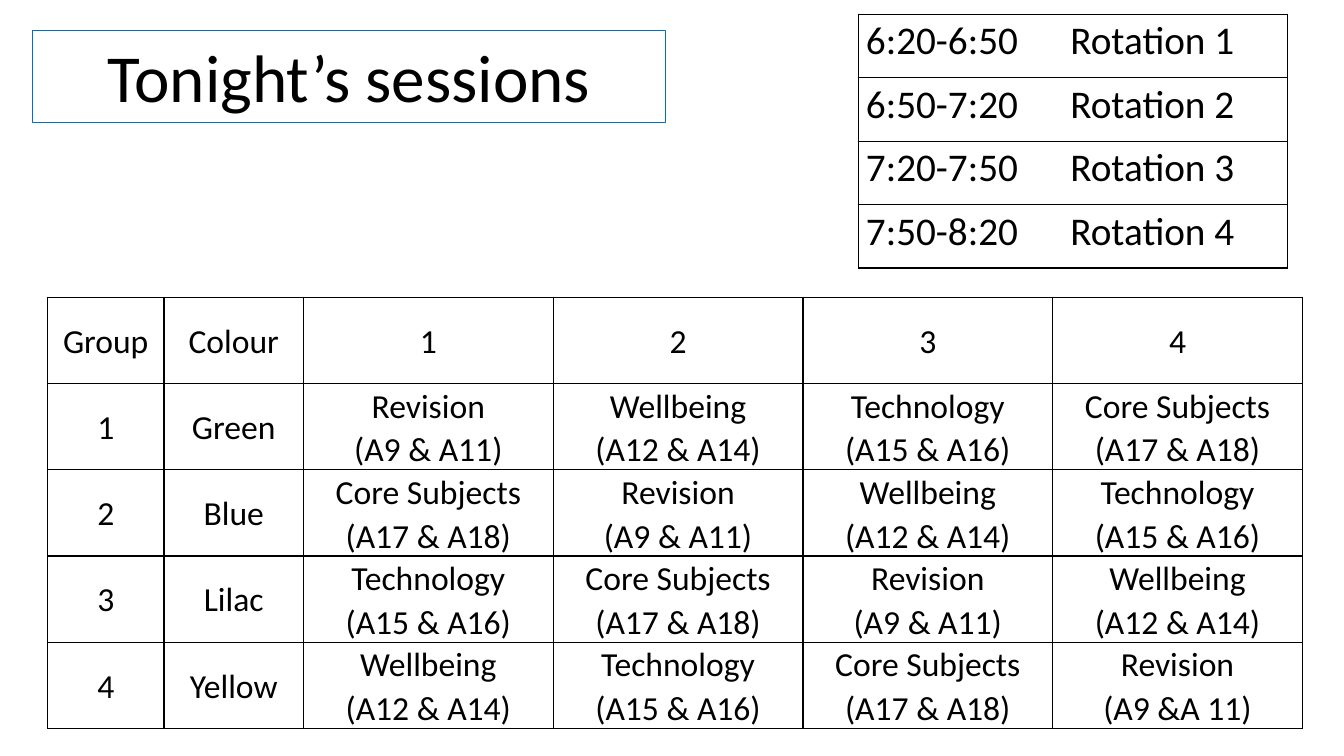
from dataclasses import dataclass

import lxml.etree
import pptx
import pptx.dml.color
import pptx.enum.text
import pptx.oxml.ns
import pptx.slide
import pptx.table
import pptx.util

Pt = pptx.util.Pt
Align = pptx.enum.text.PP_ALIGN
Anchor = pptx.enum.text.MSO_ANCHOR

COLOURS = {"text": "000000", "border": "000000", "cell": "FFFFFF", "title_line": "0070C0"}
FONT = "Calibri"
ROTATION_TAB = 146


@dataclass
class Grid:
    left: float
    top: float
    column_widths: list[float]
    row_height: float
    rows: list[list[str]]
    font_size: float
    align: Align
    anchor: Anchor


def rgb(name: str) -> pptx.dml.color.RGBColor:
    return pptx.dml.color.RGBColor.from_string(COLOURS[name])


def format_text(frame: pptx.text.text.TextFrame, size: float, align: Align) -> None:
    for paragraph in frame.paragraphs:
        paragraph.alignment = align
        for run in paragraph.runs:
            run.font.name = FONT
            run.font.size = Pt(size)
            run.font.color.rgb = rgb("text")


def add_element(parent, tag: str, **attributes: str):
    return lxml.etree.SubElement(parent, pptx.oxml.ns.qn(tag), attributes)


def add_borders(cell: pptx.table._Cell) -> None:
    """Draw all four sides; the schema wants them ahead of the fill."""
    properties = cell._tc.get_or_add_tcPr()
    for position, side in enumerate(("a:lnL", "a:lnR", "a:lnT", "a:lnB")):
        line = add_element(properties, side, w=str(Pt(1)))
        add_element(add_element(line, "a:solidFill"), "a:srgbClr", val=COLOURS["border"])
        properties.insert(position, line)


def fill_cell(cell: pptx.table._Cell, text: str, grid: Grid) -> None:
    cell.text_frame.text = text
    cell.margin_left = cell.margin_right = Pt(5.4)
    cell.margin_top = cell.margin_bottom = 0
    cell.vertical_anchor = grid.anchor
    cell.fill.solid()
    cell.fill.fore_color.rgb = rgb("cell")
    add_borders(cell)
    format_text(cell.text_frame, grid.font_size, grid.align)
    for paragraph in cell.text_frame.paragraphs:
        paragraph.line_spacing = 1.07
        if "\t" in paragraph.text:
            tabs = add_element(paragraph._p.get_or_add_pPr(), "a:tabLst")
            add_element(tabs, "a:tab", pos=str(Pt(ROTATION_TAB)), algn="l")


def add_grid(slide: pptx.slide.Slide, grid: Grid) -> None:
    table = slide.shapes.add_table(
        len(grid.rows), len(grid.column_widths), Pt(grid.left), Pt(grid.top),
        Pt(sum(grid.column_widths)), Pt(grid.row_height * len(grid.rows)),
    ).table
    table.first_row = table.horz_banding = False
    for column, width in zip(table.columns, grid.column_widths):
        column.width = Pt(width)
    for table_row, texts in zip(table.rows, grid.rows):
        table_row.height = Pt(grid.row_height)
        for cell, text in zip(table_row.cells, texts):
            fill_cell(cell, text, grid)


def add_title(slide: pptx.slide.Slide, text: str) -> None:
    title = slide.shapes.title
    title.left, title.top, title.width, title.height = Pt(23.5), Pt(21.7), Pt(451.8), Pt(65.5)
    title.line.color.rgb = rgb("title_line")
    title.line.width = Pt(0.75)
    frame = title.text_frame
    frame.text = text
    frame.word_wrap = True
    frame.auto_size = pptx.enum.text.MSO_AUTO_SIZE.SHAPE_TO_FIT_TEXT
    frame.vertical_anchor = Anchor.TOP
    format_text(frame, 48, Align.CENTER)


def session_rows() -> list[list[str]]:
    """Each group starts one session later in the cycle than the group before."""
    sessions = [
        "Revision\n(A9 & A11)",
        "Wellbeing\n(A12 & A14)",
        "Technology\n(A15 & A16)",
        "Core Subjects\n(A17 & A18)",
    ]
    rows = [["Group", "Colour", "1", "2", "3", "4"]]
    for index, colour in enumerate(["Green", "Blue", "Lilac", "Yellow"]):
        shift = -index % len(sessions)
        rows.append([str(index + 1), colour, *sessions[shift:], *sessions[:shift]])
    rows[-1][-1] = "Revision\n(A9 &A 11)"
    return rows


def main() -> None:
    presentation = pptx.Presentation()
    presentation.slide_width, presentation.slide_height = Pt(960), Pt(540)
    slide = presentation.slides.add_slide(presentation.slide_layouts.get_by_name("Title Only"))

    times = ["6:20-6:50", "6:50-7:20", "7:20-7:50", "7:50-8:20"]
    rotations = [[f"{time}\tRotation {number}"] for number, time in enumerate(times, 1)]
    add_grid(slide, Grid(33.9, 212.3, [83.3, 99.6] + [178.4] * 4, 61.5,
                         session_rows(), 24, Align.CENTER, Anchor.MIDDLE))
    add_grid(slide, Grid(613.2, 10.2, [306.7], 45.3,
                         rotations, 28, Align.LEFT, Anchor.TOP))
    add_title(slide, "Tonight’s sessions")
    presentation.save("out.pptx")


if __name__ == "__main__":
    main()
